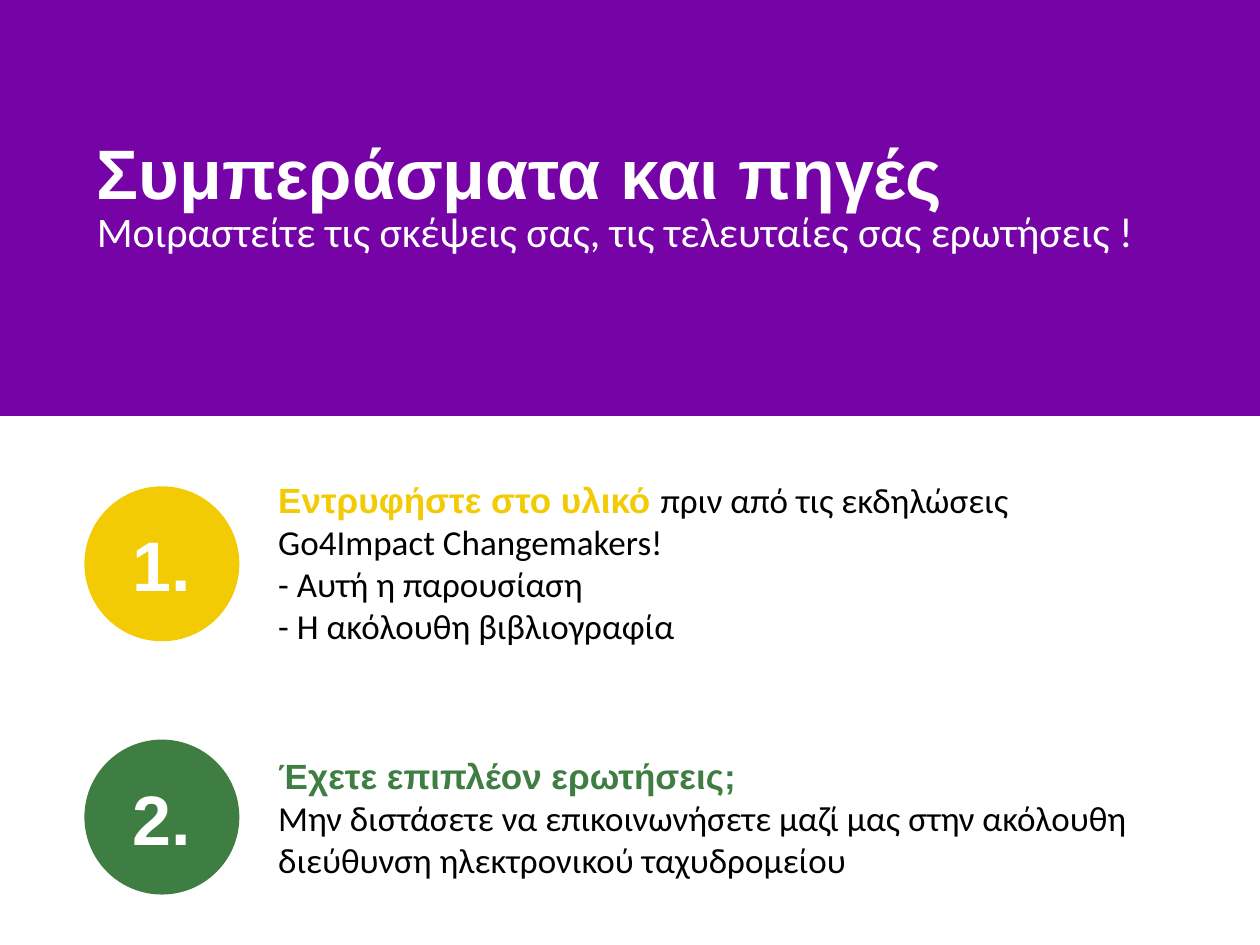
from pptx import Presentation
from pptx.dml.color import RGBColor
from pptx.enum.shapes import MSO_SHAPE
from pptx.enum.text import MSO_ANCHOR, PP_ALIGN
from pptx.util import Inches, Pt

RECTANGLE, OVAL = MSO_SHAPE.RECTANGLE, MSO_SHAPE.OVAL
TOP, MIDDLE = MSO_ANCHOR.TOP, MSO_ANCHOR.MIDDLE
LEFT, CENTER = PP_ALIGN.LEFT, PP_ALIGN.CENTER

PURPLE, YELLOW, GREEN = "7503A6", "F2CB05", "3F7E43"
WHITE, BLACK = "FFFFFF", "000000"

HEADING = {"name": "Arial", "size": Pt(40), "bold": True}
SUBTITLE = {"name": "Calibri", "size": Pt(24), "bold": False}
LEAD = {"name": "Arial", "size": Pt(20), "bold": True}
BODY = {"name": "Calibri", "size": Pt(20), "bold": False}

MARGIN = 0.67
CIRCLE_SIZE = 1.23


def color(hex_value):
    return RGBColor.from_string(hex_value)


def write(shape, paragraphs, anchor=TOP, alignment=LEFT, spacing=1.0):
    """Fill a shape with paragraphs, each a list of (text, format, colour) runs."""
    frame = shape.text_frame
    frame.word_wrap = True
    frame.vertical_anchor = anchor
    for index, runs in enumerate(paragraphs):
        paragraph = frame.add_paragraph() if index else frame.paragraphs[0]
        paragraph.alignment = alignment
        paragraph.line_spacing = spacing
        for text, font_format, hex_value in runs:
            run = paragraph.add_run()
            run.text = text
            run.font.color.rgb = color(hex_value)
            for attribute, value in font_format.items():
                setattr(run.font, attribute, value)


presentation = Presentation()
presentation.slide_width = Inches(10)
presentation.slide_height = Inches(7.5)
slide = presentation.slides.add_slide(presentation.slide_layouts[6])
shapes = slide.shapes

# Header band
band = shapes.add_shape(RECTANGLE, 0, 0, presentation.slide_width, Inches(3.28))
band.shadow.inherit = False
band.fill.solid()
band.fill.fore_color.rgb = color(PURPLE)
band.line.color.rgb = color(PURPLE)
band.line.width = Pt(3)

title = shapes.add_textbox(Inches(MARGIN), Inches(0.68), Inches(8.46), Inches(1.45))
write(title, [[("Συμπεράσματα και πηγές", HEADING, WHITE)]], anchor=MIDDLE, spacing=0.9)

subtitle = shapes.add_textbox(Inches(MARGIN), Inches(1.63), Inches(8.46), Inches(0.5))
subtitle_text = "Μοιραστείτε τις σκέψεις σας, τις τελευταίες σας ερωτήσεις !"
write(subtitle, [[(subtitle_text, SUBTITLE, WHITE)]], spacing=0.9)

# Numbered points: number, colour, circle top, text top, text height, paragraphs
points = [
    ("1.", YELLOW, 3.86, 3.75, 1.45, [
        [("Εντρυφήστε στο υλικό ", LEAD, YELLOW),
         ("πριν από τις εκδηλώσεις Go4Impact Changemakers!", BODY, BLACK)],
        [("- Αυτή η παρουσίαση", BODY, BLACK)],
        [("- Η ακόλουθη βιβλιογραφία", BODY, BLACK)],
    ]),
    ("2.", GREEN, 5.87, 5.94, 1.11, [
        [("Έχετε επιπλέον ερωτήσεις;", LEAD, GREEN)],
        [("Μην διστάσετε να επικοινωνήσετε μαζί μας στην ακόλουθη "
          "διεύθυνση ηλεκτρονικού ταχυδρομείου", BODY, BLACK)],
    ]),
]
for number, accent, circle_top, text_top, text_height, paragraphs in points:
    circle = shapes.add_shape(OVAL, Inches(MARGIN), Inches(circle_top),
                              Inches(CIRCLE_SIZE), Inches(CIRCLE_SIZE))
    circle.shadow.inherit = False
    circle.fill.solid()
    circle.fill.fore_color.rgb = color(accent)
    circle.line.fill.background()
    write(circle, [[(number, HEADING, WHITE)]], anchor=MIDDLE, alignment=CENTER)

    point_text = shapes.add_textbox(Inches(2.11), Inches(text_top),
                                    Inches(7.22), Inches(text_height))
    write(point_text, paragraphs)

presentation.save("out.pptx")
